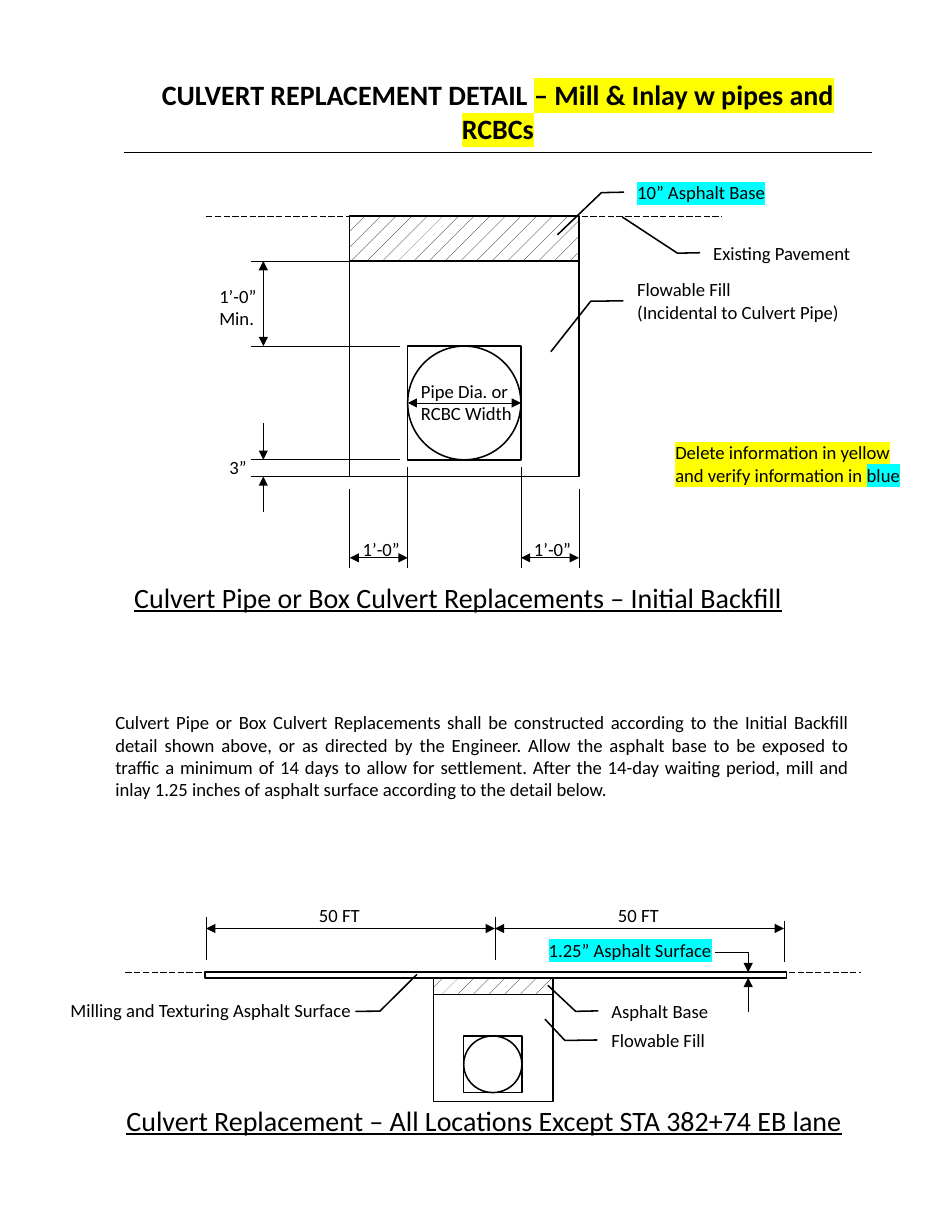
from dataclasses import dataclass

from lxml.etree import SubElement
from pptx import Presentation
from pptx.dml.color import RGBColor
from pptx.enum.dml import MSO_LINE, MSO_PATTERN
from pptx.enum.shapes import MSO_CONNECTOR, MSO_SHAPE
from pptx.enum.text import MSO_ANCHOR, MSO_AUTO_SIZE, PP_ALIGN
from pptx.oxml import parse_xml
from pptx.oxml.ns import nsdecls, qn
from pptx.util import Pt

COLORS = {"black": "000000", "white": "FFFFFF", "yellow": "FFFF00", "blue": "00FFFF"}
FONT = "Calibri"


@dataclass
class Line:
    x1: float
    y1: float
    x2: float
    y2: float
    ends: str = ""  # "tail" or "head tail"
    dash: bool = False


@dataclass
class Box:
    left: float
    top: float
    width: float
    height: float
    kind: MSO_SHAPE = MSO_SHAPE.RECTANGLE
    fill: str = ""  # "hatch" or "white"


@dataclass
class Label:
    left: float
    top: float
    width: float
    height: float
    text: str
    size: int = 12
    mark: str = ""
    extra: tuple[str, str] = ("", "")  # second run and its highlight
    wrap: bool = True
    under: bool = False
    align: PP_ALIGN = PP_ALIGN.LEFT


@dataclass
class Callout:
    left: float
    top: float
    width: float
    text: str
    tip: tuple[float, float]
    bend: tuple[float, ...] = (0.502, -0.011, 0.515, -0.137)
    mark: str = ""


def color(name: str) -> RGBColor:
    return RGBColor.from_string(COLORS[name])


def style(run, size: int, mark: str = "", bold: bool = False, under: bool = False) -> None:
    font = run.font
    font.size, font.name, font.bold, font.underline = Pt(size), FONT, bold, under
    font.color.rgb = color("black")
    if mark:
        light = parse_xml(f'<a:highlight {nsdecls("a")}><a:srgbClr val="{COLORS[mark]}"/></a:highlight>')
        run.font._element.find(qn("a:solidFill")).addnext(light)


def write(frame, text: str, size: int = 12, mark: str = "", extra=("", ""), **looks) -> None:
    """Fill a text frame, with an optional second run in its own highlight."""
    frame.text = text
    for para in frame.paragraphs:
        for run in para.runs:
            style(run, size, mark, **looks)
    if extra[0]:
        run = frame.paragraphs[-1].add_run()
        run.text = extra[0]
        style(run, size, extra[1], **looks)


def draw_line(shapes, line: Line):
    link = shapes.add_connector(
        MSO_CONNECTOR.STRAIGHT, Pt(line.x1), Pt(line.y1), Pt(line.x2), Pt(line.y2))
    link.line.color.rgb, link.line.width = color("black"), Pt(0.5)
    if line.dash:
        link.line.dash_style = MSO_LINE.LONG_DASH
    for end in line.ends.split():
        SubElement(link.line._get_or_add_ln(), qn(f"a:{end}End"), type="triangle")
    SubElement(link._element.spPr, qn("a:effectLst"))
    return link


def draw_box(shapes, box: Box):
    shape = shapes.add_shape(box.kind, Pt(box.left), Pt(box.top), Pt(box.width), Pt(box.height))
    shape.shadow.inherit = False
    shape.line.color.rgb, shape.line.width = color("black"), Pt(1)
    if box.fill == "hatch":
        shape.fill.patterned()
        shape.fill.pattern = MSO_PATTERN.PERCENT_5
        shape.fill.fore_color.rgb, shape.fill.back_color.rgb = color("black"), color("white")
    elif box.fill:
        shape.fill.solid()
        shape.fill.fore_color.rgb = color(box.fill)
    else:
        shape.fill.background()
    return shape


def draw_callout(shapes, note: Callout) -> None:
    shape = draw_box(shapes, Box(note.left, note.top, note.width, 25.2,
                                 MSO_SHAPE.LINE_CALLOUT_2_NO_BORDER))
    for i, value in enumerate(note.bend + note.tip):
        shape.adjustments[i] = value
    frame = shape.text_frame
    write(frame, note.text, mark=note.mark)
    frame.vertical_anchor = MSO_ANCHOR.MIDDLE
    for para in frame.paragraphs:
        para.alignment = PP_ALIGN.LEFT


def draw_label(shapes, label: Label) -> None:
    frame = shapes.add_textbox(
        Pt(label.left), Pt(label.top), Pt(label.width), Pt(label.height)).text_frame
    frame.word_wrap = label.wrap
    frame.auto_size = MSO_AUTO_SIZE.SHAPE_TO_FIT_TEXT
    write(frame, label.text, label.size, label.mark, label.extra, under=label.under)
    for para in frame.paragraphs:
        para.alignment = label.align


def draw_title(shapes) -> None:
    table = shapes.add_table(1, 1, Pt(79.2), Pt(46.8), Pt(481.7), Pt(29.5)).table
    table.first_row = table.horz_banding = False
    cell = table.cell(0, 0)
    write(cell.text_frame, "CULVERT REPLACEMENT DETAIL ", 18,
          extra=("– Mill & Inlay w pipes and RCBCs", "yellow"), bold=True)
    cell.text_frame.paragraphs[0].alignment = PP_ALIGN.CENTER
    cell.fill.background()
    for i, side in enumerate("LRTB"):
        tone = COLORS["black" if side == "B" else "white"]
        cell._tc.get_or_add_tcPr().insert(i, parse_xml(
            f'<a:ln{side} {nsdecls("a")} w="{Pt(1)}"><a:solidFill>'
            f'<a:srgbClr val="{tone}"/></a:solidFill></a:ln{side}>'))


BOTH = "head tail"
OVAL = MSO_SHAPE.OVAL
# Trench section: left, pipe left, pipe right, right; then levels going down
X1, X2, X3, X4 = 224.8, 262.1, 334.9, 372.2
GROUND, BASE, CROWN, INVERT, BED = 139, 167.8, 222.5, 295.6, 306.3
DIM, FOOT = 169.3, 358.6
# Road section
START, MID, END, ROAD, SPAN = 132.5, 318.2, 504, 625, 596.9

LINES = [
    Line(132.5, GROUND, 464.4, GROUND, dash=True),
    *[Line(161.3, y, 243.4, y) for y in (BASE, BED)],
    *[Line(161.3, y, 257, y) for y in (CROWN, INVERT)],
    *[Line(x, 365, x, 314.6) for x in (X1, X4)],
    *[Line(x, 365, x, 300.2) for x in (X2, X3)],
    *[Line(a, FOOT, b, FOOT, BOTH) for a, b in ((X2, X1), (X4, X3))],
    Line(DIM, BASE, DIM, CROWN, BOTH),
    Line(DIM, 272.2, DIM, INVERT, "tail"),
    Line(DIM, 329, DIM, BED, "tail"),
    Line(80.6, ROAD, 553.7, ROAD, dash=True),
    *[Line(x, 589.7, x, 617) for x in (START, MID)],
    Line(END, 591.8, END, 618.5),
    *[Line(a, SPAN, b, SPAN, BOTH) for a, b in ((START, MID), (MID, END))],
    Line(481, 650.9, 481, 628.6, "tail"),
    Line(481, 612, 481, ROAD, "tail"),
    Line(459.4, 612, 481, 612),
]
PIPE = Box(X2, CROWN, X3 - X2, INVERT - CROWN)
BOXES = [
    Box(X1, BASE, X4 - X1, BED - BASE),
    Box(X1, GROUND, X4 - X1, BASE - GROUND, fill="hatch"),
    Box(X2, CROWN, X3 - X2, INVERT - CROWN, OVAL),
    Box(278.6, 639.4, 77, 68.8),
    Box(278.6, ROAD, 77, 14.4, fill="hatch"),
    Box(298.1, 666, 37.4, 36.4, OVAL),
    Box(298.1, 666, 37.4, 36.4),
    Box(131.8, ROAD, 373.7, 3.6, fill="white"),
]
CALLOUTS = [
    Callout(402.5, 110.9, 115.9, "10” Asphalt Base", (1.59, -0.381), mark="blue"),
    Callout(402.5, 180.7, 166.3, "Flowable Fill\n(Incidental to Culvert Pipe)", (1.803, -0.291)),
    Callout(451.4, 149.8, 115.9, "Existing Pavement", (-0.41, -0.443)),
    Callout(385.9, 637.2, 115.9, "Asphalt Base", (-0.15, -0.291)),
    Callout(385.9, 655.9, 166.3, "Flowable Fill", (-0.03, -0.214)),
    Callout(38.2, 636.5, 225.4, "Milling and Texturing Asphalt Surface", (-0.403, 1.02),
            (0.543, 0.844, 0.538, 0.914)),
]
LABELS = [
    Label(67, 453.6, 486, 65.5,
          "Culvert Pipe or Box Culvert Replacements shall be constructed according to the "
          "Initial Backfill detail shown above, or as directed by the Engineer. Allow the "
          "asphalt base to be exposed to traffic a minimum of 14 days to allow for settlement. "
          "After the 14-day waiting period, mill and inlay 1.25 inches of asphalt surface "
          "according to the detail below.", align=PP_ALIGN.JUSTIFY),
    Label(79.2, 369.4, 432, 28.8, "Culvert Pipe or Box Culvert Replacements – Initial Backfill",
          18, wrap=False, under=True),
    Label(74.2, 705.6, 493.2, 28.8,
          "Culvert Replacement – All Locations Except STA 382+74 EB lane",
          18, wrap=False, under=True),
    *[Label(x, 342, 38.9, 21.6, "1’-0”", wrap=False) for x in (226.1, 336.2)],
    Label(263.5, 240.5, 72.7, 36, "Pipe Dia. or\nRCBC Width", wrap=False),
    Label(140.4, 289.4, 25.9, 21.6, "3”", wrap=False),
    Label(133.9, 179.3, 38.9, 36, "1’-0”\nMin.", wrap=False),
    *[Label(x, 577.4, 42, 21.6, "50 FT") for x in (198, 390.2)],
    Label(345.6, 599.8, 120, 21.6, "1.25” Asphalt Surface", mark="blue"),
    Label(427, 280.1, 166.3, 36, "Delete information in yellow and verify information in ",
          mark="yellow", extra=("blue", "blue")),
]


def main() -> None:
    deck = Presentation()
    deck.slide_width, deck.slide_height = Pt(612), Pt(792)
    shapes = deck.slides.add_slide(deck.slide_layouts[6]).shapes
    draw_title(shapes)
    for draw, items in ((draw_line, LINES), (draw_box, BOXES),
                        (draw_callout, CALLOUTS), (draw_label, LABELS)):
        for item in items:
            draw(shapes, item)
    pipe = draw_box(shapes, PIPE)
    middle = (CROWN + INVERT) / 2
    width = draw_line(shapes, Line(X2, middle, X3, middle, BOTH))
    width.begin_connect(pipe, 1)
    width.end_connect(pipe, 3)
    deck.save("out.pptx")


if __name__ == "__main__":
    main()
